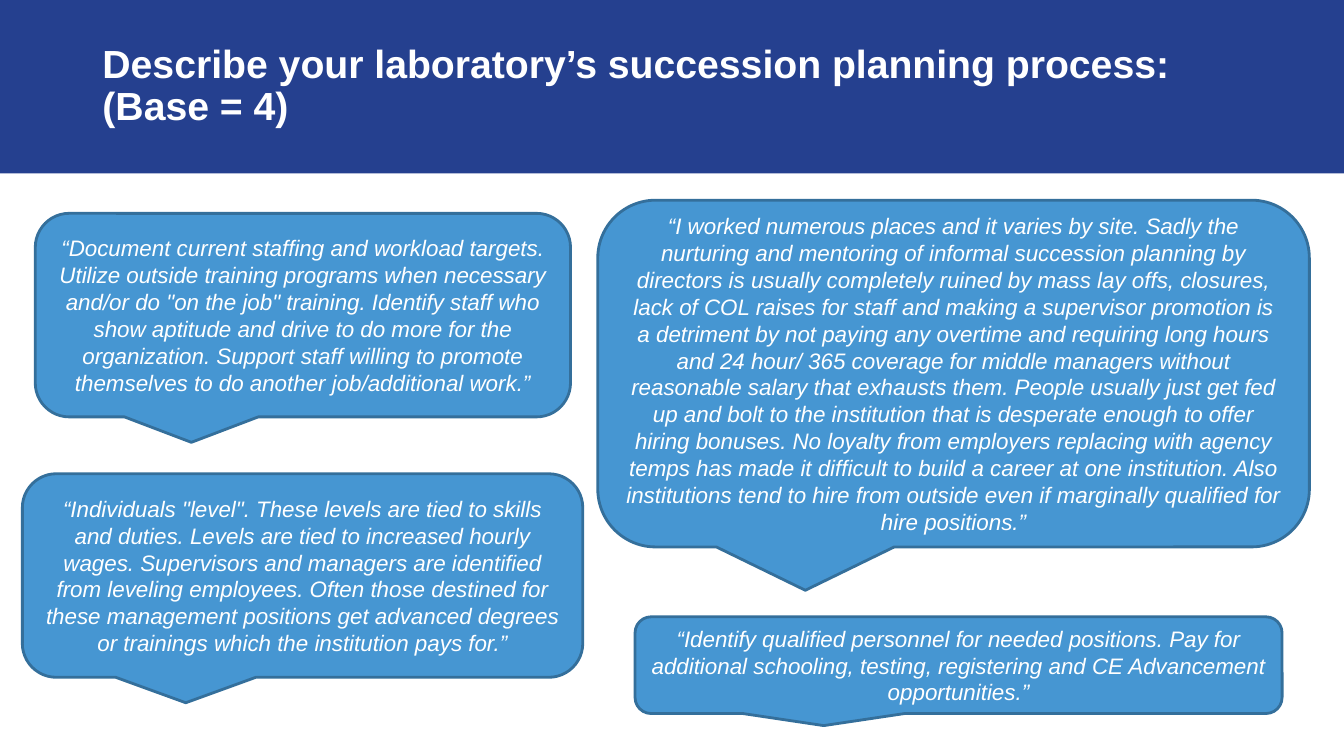
"""Build the succession planning slide with four quoted answers."""
from dataclasses import dataclass

from pptx import Presentation
from pptx.dml.color import RGBColor
from pptx.enum.shapes import MSO_SHAPE as Preset
from pptx.enum.text import MSO_ANCHOR as Anchor, MSO_AUTO_SIZE as AutoSize, PP_ALIGN as Align
from pptx.shapes.autoshape import Shape
from pptx.slide import Slide
from pptx.util import Pt

NAVY = RGBColor(0x25, 0x40, 0x8F)
SKY = RGBColor(0x46, 0x96, 0xD2)
STEEL = RGBColor(0x34, 0x6F, 0x9B)
WHITE = RGBColor(0xFF, 0xFF, 0xFF)

BASE_FONT = {"name": "Arial"}
TITLE_FONT = BASE_FONT | {"size": Pt(28), "bold": True}
QUOTE_FONT = BASE_FONT | {"size": Pt(16), "italic": True}

TITLE = "Describe your laboratory’s succession planning process: (Base = 4)"


@dataclass(frozen=True)
class Quote:
    left: float
    top: float
    width: float
    height: float
    text: str


QUOTES = [
    Quote(
        25.2, 152.4, 382.3, 145.4,
        '“Document current staffing and workload targets. Utilize outside training programs '
        'when necessary and/or do "on the job" training. Identify staff who show aptitude and '
        'drive to do more for the organization. Support staff willing to promote themselves to '
        'do another job/additional work.”',
    ),
    Quote(
        427, 143, 508.3, 247.7,
        '“I worked numerous places and it varies by site. Sadly the nurturing and mentoring of '
        'informal succession planning by directors is usually completely ruined by mass lay '
        'offs, closures, lack of COL raises for staff and making a supervisor promotion is a '
        'detriment by not paying any overtime and requiring long hours and 24 hour/ 365 '
        'coverage for middle managers without reasonable salary that exhausts them. People '
        'usually just get fed up and bolt to the institution that is desperate enough to offer '
        'hiring bonuses. No loyalty from employers replacing with agency temps has made it '
        'difficult to build a career at one institution. Also institutions tend to hire from '
        'outside even if marginally qualified for hire positions.”',
    ),
    Quote(
        16, 338.4, 400.3, 145.4,
        '“Individuals "level". These levels are tied to skills and duties. Levels are tied to '
        'increased hourly wages. Supervisors and managers are identified from leveling '
        'employees. Often those destined for these management positions get advanced degrees '
        'or trainings which the institution pays for.”',
    ),
    Quote(
        453.6, 440.6, 462.2, 69.1,
        '“Identify qualified personnel for needed positions. Pay for additional schooling, '
        'testing, registering and CE Advancement opportunities.”',
    ),
]


def write_text(box: Shape, text: str, align: Align, font_values: dict) -> None:
    """Fill a box with one white, vertically centred paragraph."""
    frame = box.text_frame
    frame.word_wrap = True
    frame.vertical_anchor = Anchor.MIDDLE
    para = frame.paragraphs[0]
    para.alignment = align
    span = para.add_run()
    span.text = text
    for name, value in font_values.items():
        setattr(span.font, name, value)
    span.font.color.rgb = WHITE


def add_filled(page: Slide, preset: Preset, bounds: tuple, color: RGBColor) -> Shape:
    """Add a flat shape with a solid fill and no outline."""
    shape = page.shapes.add_shape(preset, *map(Pt, bounds))
    shape.shadow.inherit = False
    shape.fill.solid()
    shape.fill.fore_color.rgb = color
    shape.line.fill.background()
    return shape


def add_heading(page: Slide) -> None:
    """Place the title over its full-width band."""
    band = add_filled(page, Preset.RECTANGLE, (0, 0, 960, 123.8), NAVY)
    title = page.shapes.title
    title.element.addprevious(band.element)
    bounds = {"left": 66, "top": 28, "width": 828, "height": 68.4}
    for name, value in bounds.items():
        setattr(title, name, Pt(value))
    write_text(title, TITLE, Align.LEFT, TITLE_FONT)
    title.text_frame.auto_size = AutoSize.SHAPE_TO_FIT_TEXT
    title.text_frame.paragraphs[0].line_spacing = 0.9


def add_quote(page: Slide, quote: Quote) -> None:
    """Draw one speech bubble with its quotation."""
    bounds = (quote.left, quote.top, quote.width, quote.height)
    bubble = add_filled(page, Preset.ROUNDED_RECTANGULAR_CALLOUT, bounds, SKY)
    bubble.line.color.rgb = STEEL
    bubble.line.width = Pt(2)
    write_text(bubble, quote.text, Align.CENTER, QUOTE_FONT)


def main() -> None:
    """Assemble and save the deck."""
    deck = Presentation()
    deck.slide_width, deck.slide_height = Pt(960), Pt(540)
    page = deck.slides.add_slide(deck.slide_layouts.get_by_name("Title Only"))
    add_heading(page)
    for quote in QUOTES:
        add_quote(page, quote)
    deck.save("out.pptx")


if __name__ == "__main__":
    main()
